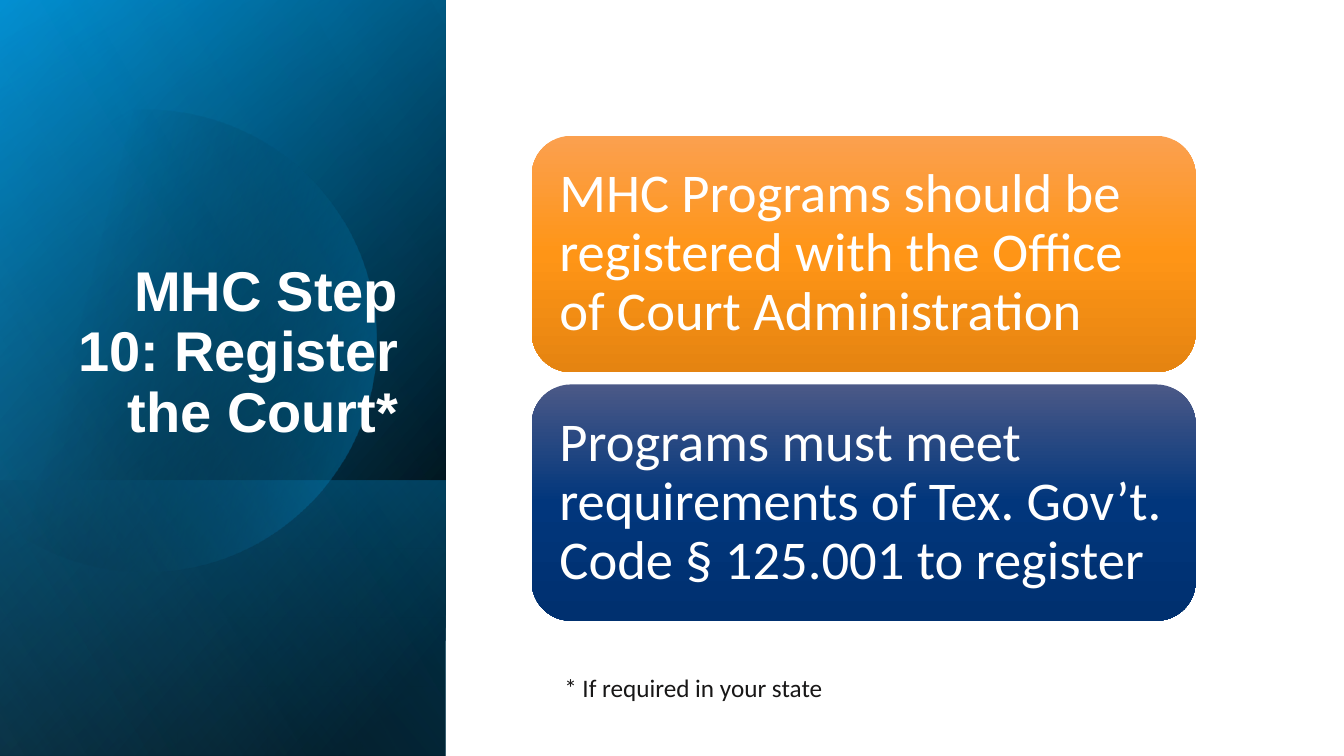
from math import cos, radians, sin, tan
from lxml import etree
from pptx import Presentation
from pptx.dml.color import RGBColor
from pptx.enum.shapes import MSO_SHAPE as Shape
from pptx.enum.text import MSO_ANCHOR as Anchor, PP_ALIGN as Align
from pptx.oxml import parse_xml
from pptx.oxml.ns import nsdecls, qn
from pptx.util import Pt


def paint_gradient(shape, stops, angle):
    """Fill a shape with stops of (position %, colour, opacity %)."""
    shape.shadow.inherit = False
    shape.line.fill.background()
    gradient = parse_xml(f'<a:gradFill {nsdecls("a")} rotWithShape="1"><a:gsLst/></a:gradFill>')
    for position, colour, opacity in stops:
        stop = etree.SubElement(gradient[0], qn("a:gs"), pos=str(position * 1000))
        tint = etree.SubElement(stop, qn("a:srgbClr"), val=colour)
        if opacity < 100:
            etree.SubElement(tint, qn("a:alpha"), val=str(opacity * 1000))
    etree.SubElement(gradient, qn("a:lin"), ang=str(angle * 60000), scaled="0")
    shape.fill.background()
    properties = shape._element.spPr
    properties.replace(properties.find(qn("a:noFill")), gradient)


def write_text(text, bounds, anchor, insets, align, spacing, **font):
    """Add a wrapped text box with one paragraph."""
    box = page.shapes.add_textbox(*map(Pt, bounds))
    frame = box.text_frame
    frame.word_wrap = True
    frame.vertical_anchor = anchor
    sides = ("margin_left", "margin_top", "margin_right", "margin_bottom")
    for side, inset in zip(sides, insets):
        setattr(frame, side, Pt(inset))
    para = frame.paragraphs[0]
    para.alignment = align
    para.line_spacing = spacing
    span = para.add_run()
    span.text = text
    span.font.color.rgb = RGBColor.from_string(font.pop("colour"))
    for name, value in font.items():
        setattr(span.font, name, value)


deck = Presentation()
deck.slide_width, deck.slide_height = Pt(960), Pt(540)
page = deck.slides.add_slide(deck.slide_layouts[6])

# White ground
ground = page.shapes.add_shape(Shape.RECTANGLE, 0, 0, Pt(960), Pt(540))
ground.shadow.inherit = False
ground.line.fill.background()
ground.fill.solid()
ground.fill.fore_color.rgb = RGBColor.from_string("FFFFFF")

# Left panel: layered gradients, each a rectangle turned by 90 degrees
PANEL_WIDTH = 318.4
layers = [
    (540, [(8, "000000", 100), (100, "007FBA", 100)], 50),
    (540, [(0, "000000", 0), (99, "00A9F8", 46)], 30),
    (196.9, [(2, "00A9F8", 29), (100, "000000", 30)], 130),
    (None, [(29, "000000", 0), (100, "00A9F8", 43)], 14),
    (540, [(0, "000000", 0), (99, "62CDFF", 11)], 120),
]
RADIUS = 165
turns = [-134, -90, 0, 90, 134]
for height, stops, angle in layers:
    if height:
        layer = page.shapes.add_shape(
            Shape.RECTANGLE, Pt((PANEL_WIDTH - height) / 2),
            Pt(540 - (height + PANEL_WIDTH) / 2), Pt(height), Pt(PANEL_WIDTH))
        layer.rotation = 90
        layer._element.spPr.find(qn("a:xfrm")).set("flipH", "1")
    else:
        # Circle cut off just beyond the left edge, its sides bent into arcs
        corners = [(Pt(103.7 + RADIUS * cos(radians(turn))),
                    Pt(243.4 + RADIUS * sin(radians(turn)))) for turn in turns]
        outline = page.shapes.build_freeform(*corners[0])
        outline.add_line_segments(corners[1:], close=True)
        layer = outline.convert_to_shape()
        sides = list(layer._element.spPr.iter(qn("a:lnTo")))[:len(turns) - 1]
        for index, side in enumerate(sides):
            first, last = turns[index:index + 2]
            reach = Pt(RADIUS * 4 / 3 * tan(radians(last - first) / 4))
            curve = etree.Element(qn("a:cubicBezTo"))
            for (x, y), turn, pull in ((corners[index], first, reach),
                                       (corners[index + 1], last, -reach),
                                       (corners[index + 1], last, 0)):
                etree.SubElement(curve, qn("a:pt"),
                                 x=str(int(x - pull * sin(radians(turn)) - layer.left)),
                                 y=str(int(y + pull * cos(radians(turn)) - layer.top)))
            side.getparent().replace(side, curve)
    paint_gradient(layer, stops, angle)

# Title
write_text("MHC Step 10: Register the Court*", (46, 132.5, 245.5, 188.6), Anchor.BOTTOM,
           (7.2, 3.6, 7.2, 3.6), Align.RIGHT, 0.9,
           size=Pt(40), name="Arial", bold=True, colour="FFFFFF")

# Cards
cards = [
    ("MHC Programs should be registered with the Office of Court Administration",
     ("FBA04F", "FF9516", "E58411")),
    ("Programs must meet requirements of Tex. Gov’t. Code § 125.001 to register",
     ("4B5987", "01367C", "00306F")),
]
for index, (text, colours) in enumerate(cards):
    top = 97 + index * 177.6
    card = page.shapes.add_shape(Shape.ROUNDED_RECTANGLE, Pt(379.8), Pt(top), Pt(474.2), Pt(168.8))
    paint_gradient(card, [(50 * step, colour, 100) for step, colour in enumerate(colours)], 90)
    write_text(text, (387.9, top + 8.2, 457.9, 152.4), Anchor.MIDDLE,
               [11.7] * 4, Align.LEFT, 0.9,
               size=Pt(39), name="Calibri", colour="FFFFFF")

# Footnote
write_text("* If required in your state", (396, 476.6, 327, 29), Anchor.TOP,
           (7.2, 3.6, 7.2, 3.6), Align.LEFT, 1.0,
           size=Pt(18), name="Calibri", colour="181717")

deck.save("out.pptx")
